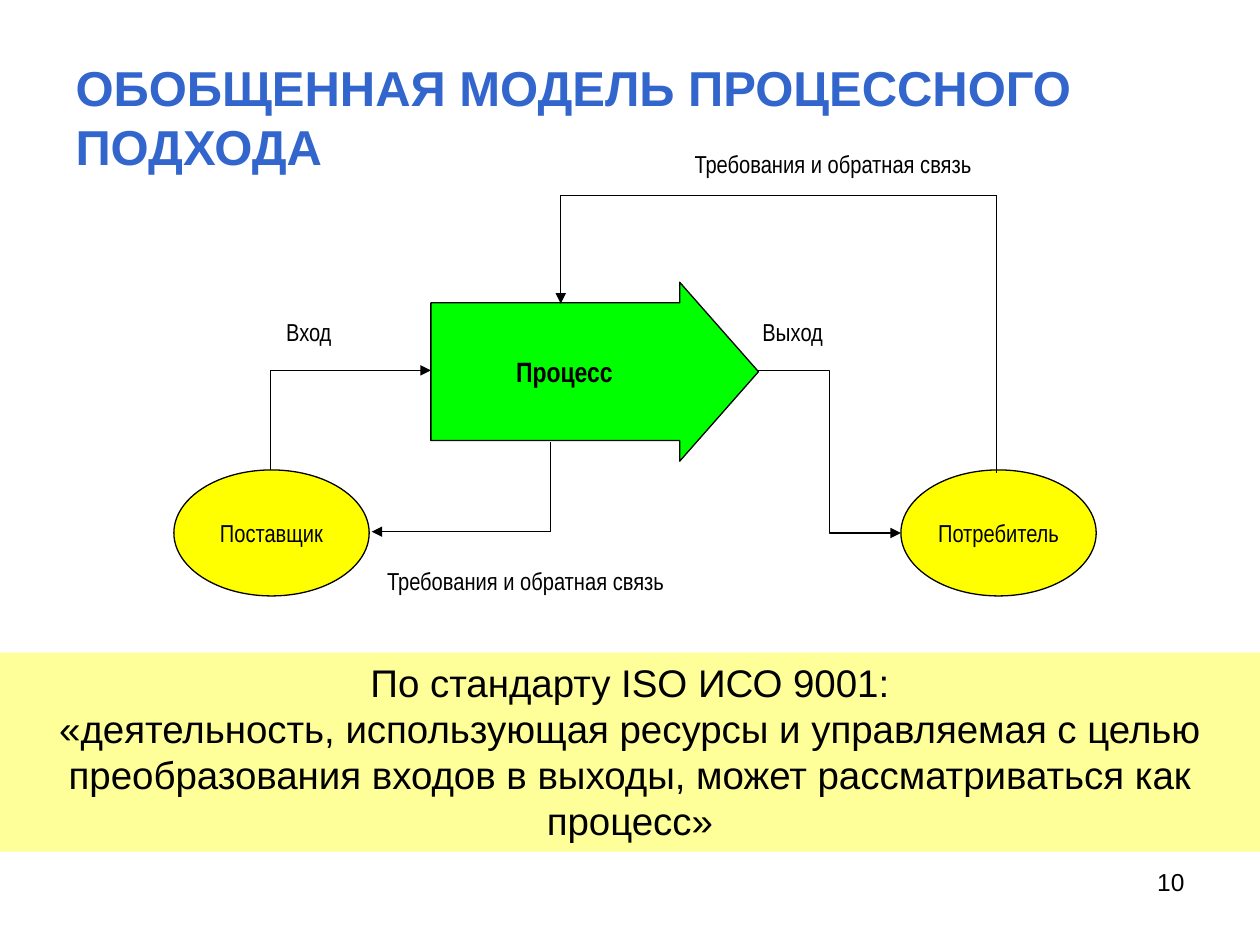
"""Build the slide with the generalised model of the process approach."""
from lxml import etree
from pptx import Presentation
from pptx import util as u
from pptx.dml.color import RGBColor
from pptx.enum import shapes, text
from pptx.oxml.ns import qn

PX = 9144
COLORS = {"ink": "000000", "title": "3366CC", "band": "FFFF99",
          "process": "00FF00", "party": "FFFF00"}
NARROW = "Arial Narrow"
FEEDBACK = "Требования и обратная связь"

TITLE = "ОБОБЩЕННАЯ МОДЕЛЬ ПРОЦЕССНОГО ПОДХОДА"
DEFINITION = [
    "По стандарту ISO ИСО 9001:",
    "«деятельность, использующая ресурсы и управляемая с целью преобразования "
    "входов в выходы, может рассматриваться как процесс»",
]
PARTIES = [("Поставщик", 138), ("Потребитель", 715)]
LABELS = [
    ("Вход", (216, 247, 57, 34)),
    ("Выход", (595, 247, 68, 34)),
    (FEEDBACK, (539, 113, 242, 34)),
    (FEEDBACK, (295, 444, 242, 34)),
]
FEEDBACK_ROUTES = [
    [(791, 375), (791, 155), (445, 155), (445, 241)],
    [(437, 351), (437, 422), (295, 422)],
]
ELBOWS = [
    ("bentConnector2", (318, 397), (239, 270), 90),
    ("bentConnector3", (602, 294), (715, 423), 0),
]


def px(values):
    return [value * PX for value in values]


def color(name):
    return RGBColor.from_string(COLORS[name])


def write(shape, lines, size=14, font=NARROW, ink="ink", bold=False,
          align=text.PP_ALIGN.CENTER, anchor=text.MSO_ANCHOR.TOP,
          wrap=False, grow=False):
    frame = shape.text_frame
    frame.text = "\n".join(lines)
    frame.word_wrap = wrap
    frame.vertical_anchor = anchor
    frame.auto_size = (text.MSO_AUTO_SIZE.SHAPE_TO_FIT_TEXT if grow
                       else text.MSO_AUTO_SIZE.NONE)
    for paragraph in frame.paragraphs:
        paragraph.alignment = align
        paragraph.font.size = u.Pt(size)
        paragraph.font.name = font
        paragraph.font.bold = bold
        paragraph.font.color.rgb = color(ink)


def add_block(slide, kind, box, fill, outlined=True):
    shape = slide.shapes.add_shape(kind, *px(box))
    shape.shadow.inherit = False
    shape.fill.solid()
    shape.fill.fore_color.rgb = color(fill)
    if outlined:
        shape.line.color.rgb = color("ink")
        shape.line.width = u.Pt(0.75)
    else:
        shape.line.fill.background()
    return shape


def add_line(slide, kind, start, end, arrow):
    connector = slide.shapes.add_connector(kind, *px(start + end))
    connector.line.color.rgb = color("ink")
    connector.line.width = u.Pt(0.75)
    if arrow:
        line = connector.line._get_or_add_ln()
        etree.SubElement(line, qn("a:tailEnd"), type="triangle")
    etree.SubElement(connector._element.spPr, qn("a:effectLst"))
    return connector


def main():
    presentation = Presentation()
    presentation.slide_width, presentation.slide_height = px((1000, 750))
    slide = presentation.slides.add_slide(presentation.slide_layouts[5])
    middle = text.MSO_ANCHOR.MIDDLE
    right = text.PP_ALIGN.RIGHT

    title = slide.shapes.title
    title.left, title.top, title.width, title.height = px((50, 30, 900, 125))
    write(title, [TITLE], size=28, font="Arial", ink="title", bold=True,
          align=text.PP_ALIGN.LEFT, anchor=middle, wrap=True)

    number = slide.shapes.add_textbox(*px((717, 683, 233, 52)))
    write(number, ["10"], font="Arial", align=right, wrap=True)

    band = add_block(slide, shapes.MSO_SHAPE.RECTANGLE, (0, 518, 1000, 158),
                     "band", outlined=False)
    write(band, DEFINITION, size=22, font="Arial", wrap=True, grow=True)

    process = add_block(slide, shapes.MSO_SHAPE.RIGHT_ARROW,
                        (342, 224, 260, 142), "process")
    process.adjustments[0], process.adjustments[1] = 0.77, 0.44
    write(process, ["Процесс"], size=16, bold=True, anchor=middle)

    for name, left in PARTIES:
        party = add_block(slide, shapes.MSO_SHAPE.OVAL,
                          (left, 373, 155, 100), "party")
        write(party, [name], anchor=middle)

    for preset, start, end, rotation in ELBOWS:
        elbow = add_line(slide, shapes.MSO_CONNECTOR.ELBOW, start, end, True)
        elbow.rotation = rotation
        elbow._element.spPr.find(qn("a:prstGeom")).set("prst", preset)

    for label, box in LABELS:
        write(slide.shapes.add_textbox(*px(box)), [label], align=right, grow=True)

    for route in FEEDBACK_ROUTES:
        for start, end in zip(route, route[1:]):
            add_line(slide, shapes.MSO_CONNECTOR.STRAIGHT, start, end,
                     end == route[-1])

    presentation.save("out.pptx")


if __name__ == "__main__":
    main()
